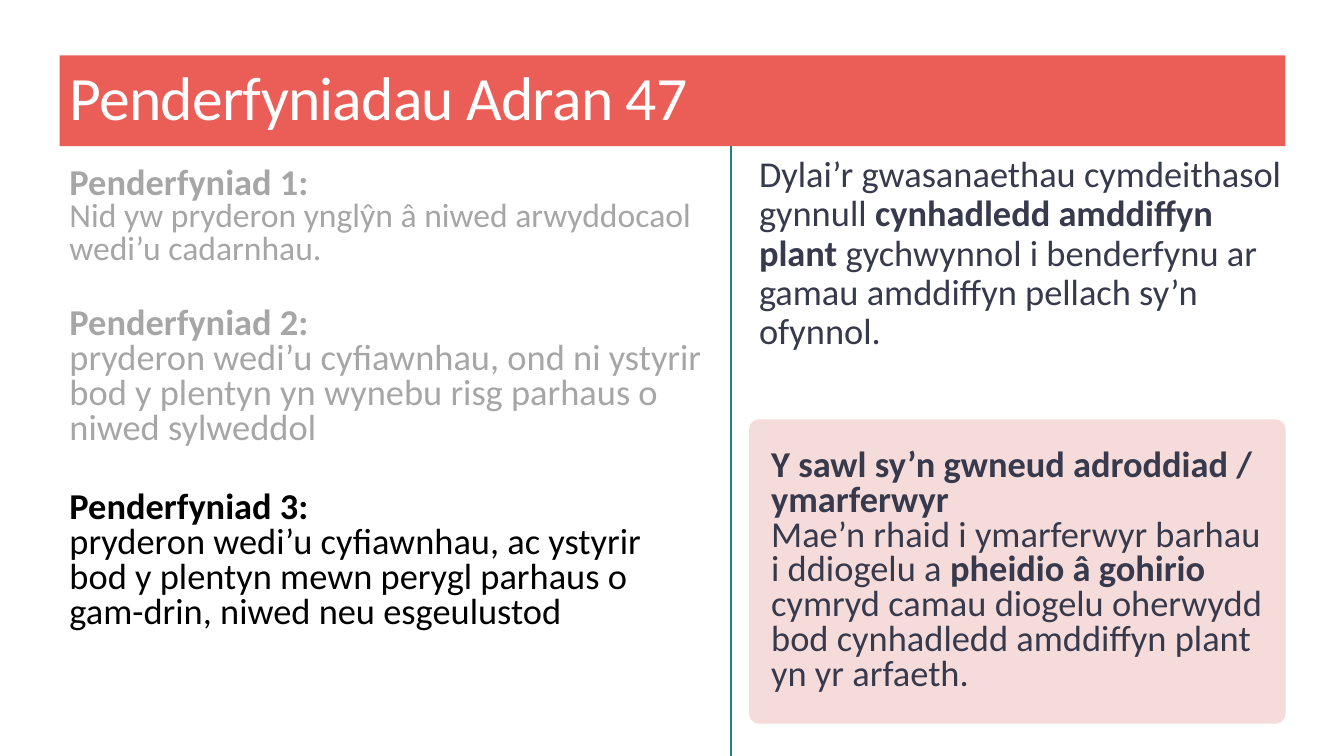
from dataclasses import dataclass

from lxml import etree
from pptx import Presentation, util as u
from pptx.dml.color import RGBColor
from pptx.enum import shapes, text


@dataclass(frozen=True)
class Theme:
    font: str = "Calibri"
    title_size: int = 44
    body_size: int = 26
    small_size: int = 24
    coral: str = "EB5E57"
    blush: str = "F5DBDA"
    teal: str = "257D86"
    navy: str = "37394C"
    grey: str = "A6A6A6"
    black: str = "000000"
    white: str = "FFFFFF"


theme = Theme()
LEFT, RIGHT = 0.59, 12.75
BANNER_TOP, BANNER_BOTTOM = 0.55, 1.45
DIVIDER = 7.25
CARD_LEFT = 7.43


def write(shape, lines, color, size=theme.body_size, spacing=0.8):
    """Fill a shape with one paragraph; each line is a list of (words, bold, size) runs."""
    frame = shape.text_frame
    frame.word_wrap = True
    frame.auto_size = text.MSO_AUTO_SIZE.NONE
    paragraph = frame.paragraphs[0]
    paragraph.alignment = text.PP_ALIGN.LEFT
    paragraph.line_spacing = spacing
    paragraph.font.name = theme.font
    paragraph.font.size = u.Pt(size)
    paragraph.font.color.rgb = RGBColor.from_string(color)
    for number, line in enumerate(lines):
        if number:
            paragraph.add_line_break()
        for words, bold, run_size in line:
            run = paragraph.add_run()
            run.text = words
            run.font.bold = bold
            run.font.size = u.Pt(run_size)
    return paragraph


def place(left, top, width, height):
    return [u.Inches(length) for length in (left, top, width, height)]


presentation = Presentation()
presentation.slide_width = u.Inches(13.33)
presentation.slide_height = u.Inches(7.5)
slide = presentation.slides.add_slide(presentation.slide_layouts.get_by_name("Title Only"))

# Title banner
title = slide.shapes.title
title.left, title.top, title.width, title.height = place(
    LEFT, BANNER_TOP, RIGHT - LEFT, BANNER_BOTTOM - BANNER_TOP)
title.fill.solid()
title.fill.fore_color.rgb = RGBColor.from_string(theme.coral)
title.text_frame.vertical_anchor = text.MSO_ANCHOR.MIDDLE
heading = write(title, [[("Penderfyniadau Adran 47", False, theme.title_size)]],
                theme.white, theme.title_size, 0.9)
heading.runs[0]._r.get_or_add_rPr().set("spc", "-60")

# Divider between the decisions and the guidance
divider = slide.shapes.add_connector(
    shapes.MSO_CONNECTOR.STRAIGHT, u.Inches(DIVIDER), u.Inches(BANNER_BOTTOM),
    u.Inches(DIVIDER), presentation.slide_height)
divider.line.color.rgb = RGBColor.from_string(theme.teal)
divider.line.width = u.Pt(0.75)
etree.SubElement(divider._element.spPr,
                 "{http://schemas.openxmlformats.org/drawingml/2006/main}effectLst")

# Decisions: the current one is black, the earlier ones are greyed out
decisions = [
    (1.58, 1.64, theme.grey, theme.small_size,
     "Nid yw pryderon ynglŷn â niwed arwyddocaol wedi’u cadarnhau."),
    (2.97, 1.64, theme.grey, theme.body_size,
     "pryderon wedi’u cyfiawnhau, ond ni ystyrir bod y plentyn yn wynebu risg parhaus "
     "o niwed sylweddol"),
    (4.8, 2.17, theme.black, theme.body_size,
     "pryderon wedi’u cyfiawnhau, ac ystyrir bod y plentyn mewn perygl parhaus "
     "o gam-drin, niwed neu esgeulustod"),
]
for number, (top, height, color, size, outcome) in enumerate(decisions, 1):
    box = slide.shapes.add_textbox(*place(LEFT, top, 6.48, height))
    box.text_frame.margin_top = box.text_frame.margin_bottom = u.Inches(0.08)
    write(box, [[(f"Penderfyniad {number}:", True, theme.body_size)],
                [(outcome, False, size)]], color)

# What social services should do
guidance = slide.shapes.add_textbox(*place(CARD_LEFT, 1.5, 5.5, 2.46))
write(guidance, [[
    ("Dylai’r gwasanaethau cymdeithasol gynnull ", False, theme.body_size),
    ("cynhadledd amddiffyn plant ", True, theme.body_size),
    ("gychwynnol i benderfynu ar gamau amddiffyn pellach sy’n ofynnol.",
     False, theme.body_size),
]], theme.navy, spacing=0.9)

# What practitioners must do
card = slide.shapes.add_shape(shapes.MSO_SHAPE.ROUNDED_RECTANGLE,
                              *place(CARD_LEFT, 4.16, RIGHT - CARD_LEFT, 3.02))
card.adjustments[0] = 0.034
card.shadow.inherit = False
card.fill.solid()
card.fill.fore_color.rgb = RGBColor.from_string(theme.blush)
card.line.fill.background()
card.text_frame.vertical_anchor = text.MSO_ANCHOR.MIDDLE
duty = write(card, [
    [("Y sawl sy’n gwneud adroddiad / ymarferwyr", True, theme.body_size)],
    [("Mae’n rhaid i ymarferwyr barhau i ddiogelu a ", False, theme.body_size),
     ("pheidio â gohirio ", True, theme.body_size),
     ("cymryd camau diogelu oherwydd bod cynhadledd amddiffyn plant yn yr arfaeth.",
      False, theme.body_size)],
], theme.navy)
duty._p.get_or_add_pPr().set("marL", str(u.Inches(0.09)))

presentation.save("out.pptx")
